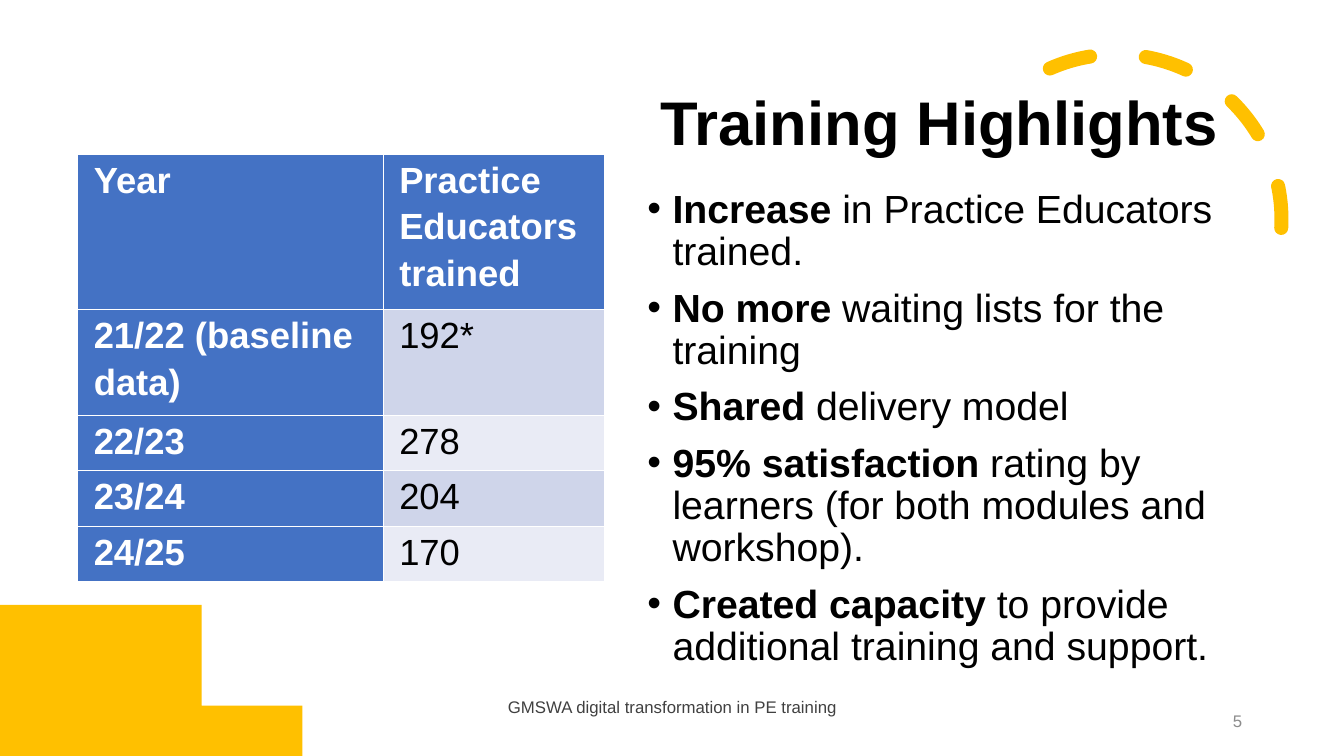
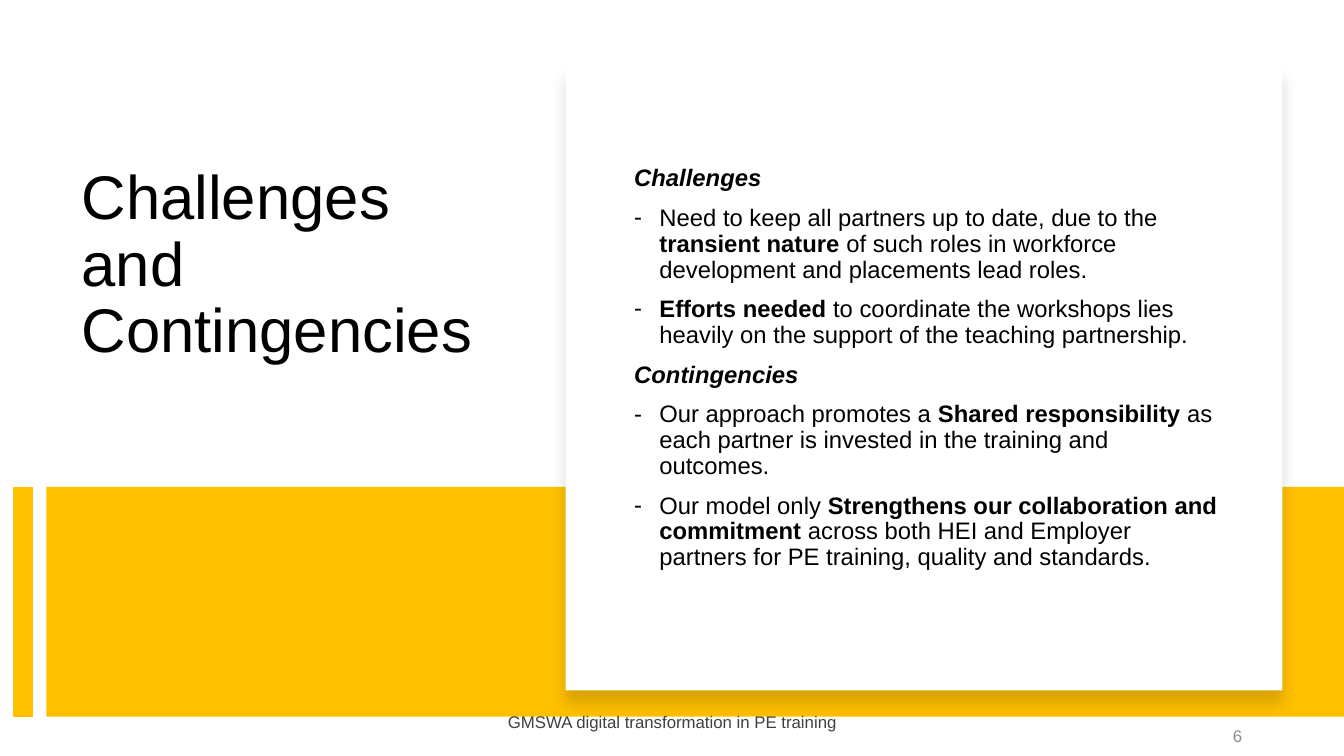
from math import cos, radians, sin, sqrt

from lxml.etree import SubElement
from pptx import Presentation
from pptx.dml.color import RGBColor
from pptx.enum.dml import MSO_LINE_DASH_STYLE as Dash
from pptx.enum.shapes import MSO_CONNECTOR, MSO_SHAPE as Shape
from pptx.enum.text import MSO_ANCHOR as Anchor, MSO_AUTO_SIZE as AutoSize, PP_ALIGN as Align
from pptx.oxml import parse_xml
from pptx.oxml.ns import nsdecls, qn
from pptx.util import Inches, Pt

W, H = 13.33, 7.5
FONT = "Arial"
BLACK, WHITE, GOLD, BLUE = "000000", "FFFFFF", "FFC000", "4472C4"
BANDS = "CFD5EA", "E9EBF5"
FOOTER = "GMSWA digital transformation in PE training"
FOOTER_GREY, NUMBER_GREY = "404040", "8C8C8C"
FIRST_NUMBER = 5

# Text between asterisk pairs is bold; a line is (bullet, text)
HIGHLIGHTS = [("•", text) for text in (
    "**Increase **in Practice Educators trained.",
    "**No more **waiting lists for the training",
    "**Shared **delivery model",
    "**95% satisfaction **rating by learners (for both modules and workshop).",
    "**Created capacity **to provide additional training and support.",
)]
TRAINED = [
    ("Year", "Practice Educators trained"),
    ("21/22 (baseline data)", "192*"),
    ("22/23", "278"),
    ("23/24", "204"),
    ("24/25", "170"),
]
COL_WIDTHS = 3.03, 2.2
ROW_HEIGHTS = 1.54, 1.05, 0.55, 0.55, 0.55
CHALLENGES = [
    (None, "Challenges"),
    ("-", "Need to keep all partners up to date, due to the **transient nature **"
          "of such roles in workforce development and placements lead roles."),
    ("-", "**Efforts needed **to coordinate the workshops lies heavily on the "
          "support of the teaching partnership."),
    (None, "Contingencies"),
    ("-", "Our approach promotes a **Shared responsibility **as each partner is "
          "invested in the training and outcomes."),
    ("-", "Our model only **Strengthens our collaboration and commitment **across "
          "both HEI and Employer partners for PE training, quality and standards."),
]


def rgb(color):
    return RGBColor.from_string(color)


def box(x, y, w, h):
    return [Inches(v) for v in (x, y, w, h)]


def add_run(p, text, size, color=BLACK, bold=False, italic=False):
    r = p.add_run()
    r.text = text
    f = r.font
    f.name, f.size, f.bold, f.italic = FONT, Pt(size), bold, italic
    f.color.rgb = rgb(color)


def place(sp, x, y, w, h, anchor=Anchor.TOP):
    """Move a text shape and return its text frame with fixed wrapping."""
    sp.left, sp.top, sp.width, sp.height = box(x, y, w, h)
    tf = sp.text_frame
    tf.word_wrap, tf.auto_size, tf.vertical_anchor = True, AutoSize.NONE, anchor
    return tf


def set_title(s, text, area, anchor=Anchor.TOP, bold=False):
    p = place(s.shapes.title, *area, anchor).paragraphs[0]
    p.alignment, p.line_spacing = Align.LEFT, 0.9
    add_run(p, text, 44, bold=bold)


def set_body(s, lines, area, size):
    body = s.placeholders[1]
    tf = place(body, *area)
    for i, (bullet, text) in enumerate(lines):
        p = tf.add_paragraph() if i else tf.paragraphs[0]
        p.line_spacing, p.space_before = 0.9, Pt(10 if i else 0)
        pPr = p._p.get_or_add_pPr()
        indent = Inches(0.25) if bullet else 0
        pPr.set("marL", str(indent))
        pPr.set("indent", str(-indent))
        if bullet:
            SubElement(pPr, qn("a:buChar")).set("char", bullet)
            for j, part in enumerate(text.split("**")):
                if part:
                    add_run(p, part, size, bold=j % 2 == 1)
        else:
            SubElement(pPr, qn("a:buNone"))
            add_run(p, text, size, bold=True, italic=True)
    body.element.getparent().append(body.element)  # bring to front


def add_footer(s, number, y):
    for text, x, top, w, color, align in (
        (FOOTER, 4.42, y - 0.14, 4.5, FOOTER_GREY, Align.CENTER),
        (str(number), 9.42, y, 3, NUMBER_GREY, Align.RIGHT),
    ):
        area = (x, top, w, 0.4)
        tf = place(s.shapes.add_textbox(*box(*area)), *area, Anchor.MIDDLE)
        p = tf.paragraphs[0]
        p.alignment = align
        add_run(p, text, 12, color)


def paint(sp, color):
    sp.shadow.inherit = False
    sp.fill.solid()
    sp.fill.fore_color.rgb = rgb(color)
    sp.line.fill.background()
    return sp


def add_rect(s, area, color):
    return paint(s.shapes.add_shape(Shape.RECTANGLE, *box(*area)), color)


def add_dashed_arc(s):
    arc = s.shapes.add_shape(Shape.ARC, *box(9.44, 0.54, 3.27, 3.27))
    arc.shadow.inherit = False
    for i, degrees in enumerate((246.1, 5.4)):
        arc.adjustments[i] = degrees * 0.6  # 60000 units per degree, scaled by 100000
    arc.fill.background()
    arc.line.color.rgb = rgb(GOLD)
    arc.line.width, arc.line.dash_style = Pt(10), Dash.DASH
    arc.line._get_or_add_ln().set("cap", "rnd")


def add_corner_disc(s, cx=1.04, top=6, radius=1.93):
    """Draw the part of a disc that lies inside the lower left corner."""
    cy = top + radius
    left_y = cy - sqrt(radius ** 2 - cx ** 2)
    right_x = cx + sqrt(radius ** 2 - (cy - H) ** 2)
    rim = [(cx + radius * cos(radians(a)), cy + radius * sin(radians(a)))
           for a in range(238, 347)]
    points = [(0, H), (0, left_y), *rim, (right_x, H)]
    fb = s.shapes.build_freeform(*points[0], scale=Inches(1))
    fb.add_line_segments(points[1:], close=True)
    paint(fb.convert_to_shape(), GOLD)


def add_trained_table(s):
    area = box(0.77, 1.53, sum(COL_WIDTHS), sum(ROW_HEIGHTS))
    table = s.shapes.add_table(len(TRAINED), len(COL_WIDTHS), *area).table
    table.first_col = True
    for col, width in zip(table.columns, COL_WIDTHS):
        col.width = Inches(width)
    for i, (row, values) in enumerate(zip(table.rows, TRAINED)):
        row.height = Inches(ROW_HEIGHTS[i])
        for j, (cell, text) in enumerate(zip(row.cells, values)):
            heading = i == 0 or j == 0
            cell.fill.solid()
            cell.fill.fore_color.rgb = rgb(BLUE if heading else BANDS[(i - 1) % 2])
            cell.margin_left = cell.margin_right = Inches(0.16)
            cell.margin_top = cell.margin_bottom = 0
            p = cell.text_frame.paragraphs[0]
            p.line_spacing, p.space_after = 1.15, Pt(8)
            add_run(p, text, 26, WHITE if heading else BLACK, bold=heading)


def add_card(s, area):
    card = add_rect(s, area, WHITE)
    spPr = card._element.spPr
    spPr.remove(spPr.find(qn("a:effectLst")))
    spPr.append(parse_xml(
        f'<a:effectLst {nsdecls("a")}><a:outerShdw blurRad="{Pt(11)}" dist="{Pt(10)}" '
        f'dir="5400000" algn="t" rotWithShape="0"><a:srgbClr val="{BLACK}">'
        '<a:alpha val="15000"/></a:srgbClr></a:outerShdw></a:effectLst>'))


def add_gold_band(s, top=4.83, height=2.28):
    add_rect(s, (0.46, top, W - 0.46, height), GOLD)
    ends = [Inches(v) for v in (0.23, top, 0.23, top + height)]
    bar = s.shapes.add_connector(MSO_CONNECTOR.STRAIGHT, *ends)
    bar.line.color.rgb, bar.line.width = rgb(GOLD), Pt(14)
    SubElement(bar._element.spPr, qn("a:effectLst"))


def build_highlights(s):
    add_dashed_arc(s)
    set_title(s, "Training Highlights", (6.45, 0.52, 5.97, 1.45), Anchor.MIDDLE, bold=True)
    add_corner_disc(s)
    set_body(s, HIGHLIGHTS, (6.32, 1.83, 6.1, 4.92), 28)
    add_trained_table(s)


def build_challenges(s):
    set_title(s, "Challenges and Contingencies", (0.71, 1.6, 4.15, 2.94))
    add_gold_band(s)
    add_card(s, (5.61, 0.64, 7.11, 6.21))
    set_body(s, CHALLENGES, (6.19, 1.6, 6.06, 4.7), 17)


def main():
    prs = Presentation()
    prs.slide_width, prs.slide_height = Inches(W), Inches(H)
    slides = (build_highlights, 6.95), (build_challenges, 7.1)
    for number, (build, footer_y) in enumerate(slides, FIRST_NUMBER):
        s = prs.slides.add_slide(prs.slide_layouts[1])
        build(s)
        add_footer(s, number, footer_y)
    prs.save("out.pptx")


if __name__ == "__main__":
    main()
